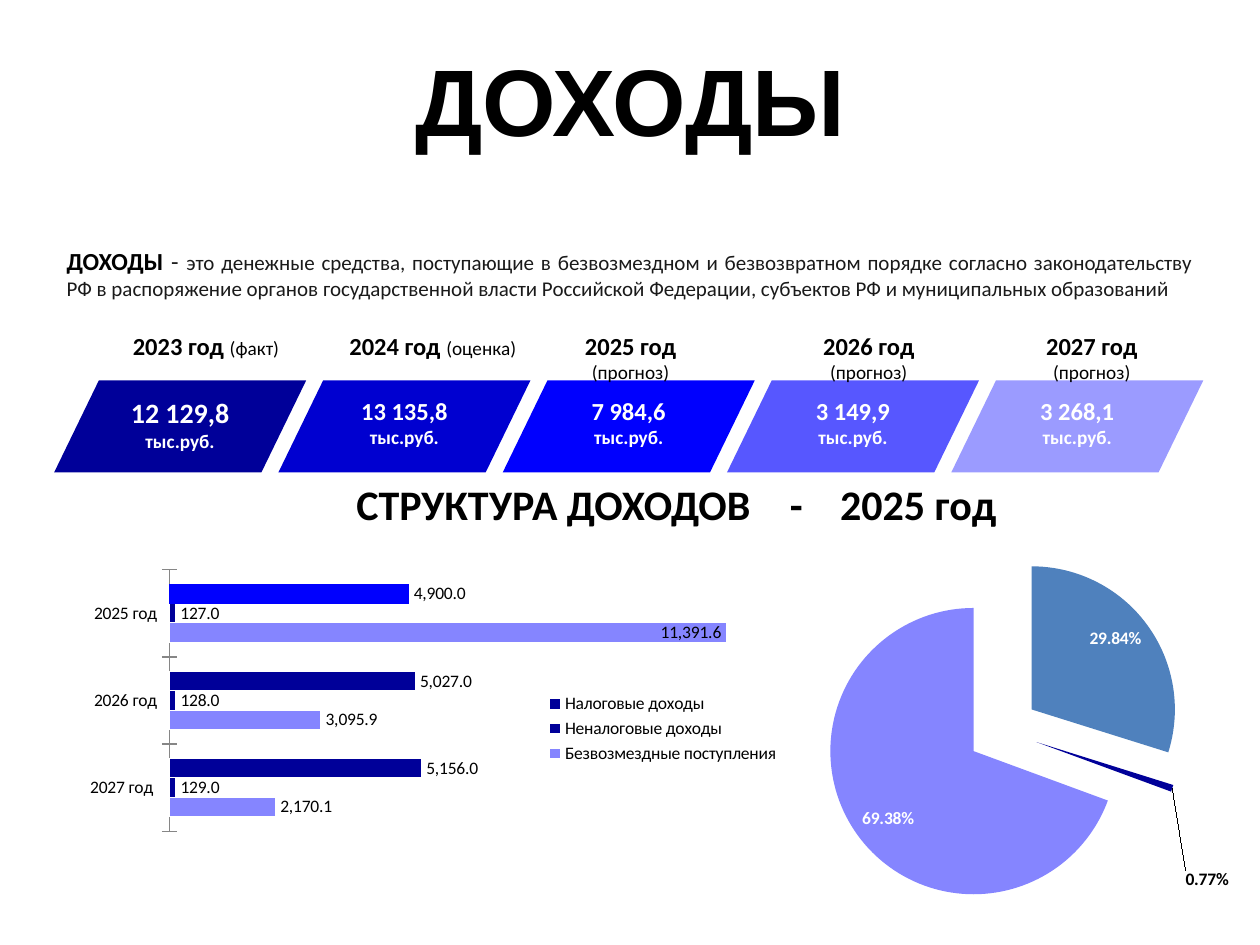
from dataclasses import dataclass

from lxml import etree
from pptx import Presentation
from pptx import util as u
from pptx.chart.data import CategoryChartData
from pptx.dml.color import RGBColor
from pptx.enum import chart as charts
from pptx.enum import shapes, text
from pptx.oxml import parse_xml
from pptx.oxml.ns import nsdecls, qn


@dataclass(frozen=True)
class Theme:
    body: str = "Calibri"
    display: str = "Arial"
    black: str = "000000"
    ink: str = "1A1A1A"
    white: str = "FFFFFF"
    axis: str = "868686"
    navy: str = "000099"
    blue: str = "0000FE"
    lilac: str = "8585FF"
    steel: str = "4F81BD"
    stages: tuple = ("000099", "0000D0", "0000FE", "5757FF", "9B9BFF")
    title: int = 54
    heading: int = 24
    large: int = 16
    strong: int = 14
    normal: int = 12
    small: int = 11
    chart: int = 10


@dataclass(frozen=True)
class Box:
    """A rectangle measured in grid cells of 0.1 inch: 100 columns by 75 rows."""
    left: float
    top: float
    width: float
    height: float

    def within(self, left, top, width, height):
        return Box(self.left + left, self.top + top, width, height)

    def place(self):
        return [u.Inches(cells / 10) for cells in (self.left, self.top, self.width, self.height)]


THEME = Theme()
# Year, status, column of the year label within its stage, amount, amount size
STAGES = [
    ("2023 год ", "(факт)", 4.3, "12 129,8 ", THEME.large),
    ("2024 год ", "(оценка)", 4.5, "13 135,8 ", THEME.strong),
    ("2025 год ", "(прогноз)", 2.4, "7 984,6 ", THEME.strong),
    ("2026 год ", "(прогноз)", 3.5, "3 149,9 ", THEME.strong),
    ("2027 год ", "(прогноз)", 3.4, "3 268,1 ", THEME.strong),
]


def color(value):
    return RGBColor.from_string(value)


def paint(target, value):
    target.format.fill.solid()
    target.format.fill.fore_color.rgb = color(value)


def style(font, size, value, bold=False, name=THEME.body):
    font.name, font.size, font.bold = name, u.Pt(size), bold
    font.color.rgb = color(value)


def add_text(parent, box, spans, align, anchor=text.MSO_ANCHOR.TOP):
    """Each span is (words, size, colour, bold)."""
    frame = parent.add_textbox(*box.place()).text_frame
    frame.word_wrap = True
    frame.auto_size = text.MSO_AUTO_SIZE.SHAPE_TO_FIT_TEXT
    frame.vertical_anchor = anchor
    para = frame.paragraphs[0]
    para.alignment = align
    for words, *look in spans:
        span = para.add_run()
        span.text = words
        style(span.font, *look)
    return para


def add_title(page, box):
    title = page.shapes.title
    title.left, title.top, title.width, title.height = box.place()
    title.text_frame.vertical_anchor = text.MSO_ANCHOR.MIDDLE
    para = title.text_frame.paragraphs[0]
    para.alignment = text.PP_ALIGN.CENTER
    span = para.add_run()
    span.text = "ДОХОДЫ"
    style(span.font, THEME.title, THEME.black, True, THEME.display)


def add_heading(page, box):
    para = add_text(page.shapes, box, [
        ("СТРУКТУРА ДОХОДОВ\t-\t2025 год", THEME.heading, THEME.black, True),
    ], text.PP_ALIGN.LEFT, text.MSO_ANCHOR.MIDDLE)
    # Tab stops for the dash and the year
    stops = etree.SubElement(para._p.get_or_add_pPr(), qn("a:tabLst"))
    for inches in (3.44, 3.84):
        etree.SubElement(stops, qn("a:tab"), pos=str(u.Inches(inches)), algn="l")


def add_definition(page, box):
    add_text(page.shapes, box, [
        ("ДОХОДЫ ", THEME.strong, THEME.black, True),
        ("- ", THEME.strong, THEME.ink),
        ("это денежные средства, поступающие в безвозмездном и безвозвратном порядке "
         "согласно законодательству РФ в распоряжение органов государственной власти "
         "Российской Федерации, субъектов РФ и муниципальных образований",
         THEME.normal, THEME.ink),
    ], text.PP_ALIGN.JUSTIFY, text.MSO_ANCHOR.MIDDLE)


def add_stages(page, box, pitch=17.8):
    center = text.PP_ALIGN.CENTER
    for index, (year, status, label_left, amount, size) in enumerate(STAGES):
        stage = box.within(index * pitch, 0, 20, box.height)
        group = page.shapes.add_group_shape().shapes
        # Slanted band
        band = group.add_shape(shapes.MSO_SHAPE.PARALLELOGRAM, *stage.within(0, 4.4, 20, 7.3).place())
        band.adjustments[0] = 0.486
        band.shadow.inherit = False
        band.fill.solid()
        band.fill.fore_color.rgb = color(THEME.stages[index])
        band.line.fill.background()
        # Year above the band, amount on it
        add_text(group, stage.within(label_left, 0, 15.5, 3.1), [
            (year, THEME.strong, THEME.black, True),
            (status, THEME.small, THEME.black),
        ], center)
        add_text(group, stage.within(3.7, 5.1, 12.6, 5.2), [
            (amount, size, THEME.white, True),
            ("тыс.руб.", THEME.small, THEME.white, True),
        ], center)


def layout_xml(inner=False, modes=True, **shares):
    target = '<c:layoutTarget val="inner"/>' if inner else ""
    edges = '<c:xMode val="edge"/><c:yMode val="edge"/>' if modes else ""
    values = "".join(f'<c:{name} val="{share}"/>' for name, share in shares.items())
    return parse_xml(f'<c:layout {nsdecls("c")}><c:manualLayout>{target}{edges}{values}'
                     '</c:manualLayout></c:layout>')


def add_chart(page, box, kind, categories, series, number_format, plot_shares):
    data = CategoryChartData(number_format=number_format)
    data.categories = categories
    for name, values in series:
        data.add_series(name, values)
    chart = page.shapes.add_chart(kind, *box.place(), data).chart
    chart.has_title = False
    chart.has_legend = False
    style(chart.font, THEME.chart, THEME.black)
    area = chart._chartSpace.chart.plotArea
    for old in area.findall(qn("c:layout")):
        area.remove(old)
    area.insert(0, layout_xml(inner=True, **plot_shares))
    return chart


def show_values(series, number_format, position, value=THEME.black, bold=False):
    labels = series.data_labels
    labels.show_value = True
    labels.number_format, labels.number_format_is_linked = number_format, False
    labels.position = position
    style(labels.font, THEME.chart, value, bold)


def set_point_label(series, index, position, number_format, bold=False, shift=None):
    label = series.points[index].data_label
    style(label.font, THEME.chart, THEME.black, bold)
    label.position = position
    node = series._element.find(qn("c:dLbls")).find(qn("c:dLbl"))
    node.insert(1, parse_xml(f'<c:numFmt {nsdecls("c")} formatCode="{number_format}" sourceLinked="0"/>'))
    if shift:
        node.insert(1, layout_xml(modes=False, **shift))


def add_bars(page, box):
    number_format, position = "#,##0.0", charts.XL_LABEL_POSITION
    chart = add_chart(page, box, charts.XL_CHART_TYPE.BAR_CLUSTERED, ["2027 год ", "2026 год", "2025 год"], [
        ("Безвозмездные поступления", (2170.1, 3095.9, 11391.6)),
        ("Неналоговые доходы", (129, 128, 127)),
        ("Налоговые доходы", (5156, 5027, 4900)),
    ], number_format, dict(x=0.157, y=0.074, w=0.8, h=0.692))
    plot = chart.plots[0]
    plot.vary_by_categories = False
    plot.gap_width, plot.overlap = 150, 0
    for series, fill in zip(plot.series, (THEME.lilac, THEME.navy, THEME.navy)):
        paint(series, fill)
        series.format.line.color.rgb = color(THEME.white)
        show_values(series, number_format, position.OUTSIDE_END)
    granted, _, taxes = plot.series
    paint(taxes.points[2], THEME.blue)
    set_point_label(granted, 2, position.INSIDE_END, number_format)
    # Axes
    chart.value_axis.visible = False
    chart.value_axis.has_major_gridlines = False
    chart.value_axis.minimum_scale, chart.value_axis.maximum_scale = 0, 12000
    chart.category_axis.major_tick_mark = charts.XL_TICK_MARK.CROSS
    chart.category_axis.format.line.color.rgb = color(THEME.axis)
    # Legend
    chart.has_legend = True
    chart.legend.position = charts.XL_LEGEND_POSITION.RIGHT
    chart.legend.include_in_layout = False
    chart.legend._element.find(qn("c:legendPos")).addnext(layout_xml(x=0.66, y=0.39, w=0.34, h=0.21))


def add_pie(page, box):
    number_format, position = "0.00%", charts.XL_LABEL_POSITION
    chart = add_chart(page, box, charts.XL_CHART_TYPE.PIE, ["1", "2", "3"],
                      [("Series 1", (0.2984, 0.0077, 0.6938))], number_format, dict(x=0, y=0.053, w=1, h=0.947))
    series = chart.plots[0].series[0]
    for index, fill in enumerate((THEME.steel, THEME.navy, THEME.lilac)):
        paint(series.points[index], fill)
    series._element.find(qn("c:dPt")).addprevious(parse_xml(f'<c:explosion {nsdecls("c")} val="25"/>'))
    show_values(series, number_format, position.INSIDE_END, THEME.white, True)
    set_point_label(series, 1, position.OUTSIDE_END, number_format, True, dict(x=0.01, y=0.21))


def main():
    deck = Presentation()
    deck.slide_width, deck.slide_height = u.Inches(10), u.Inches(7.5)
    page = deck.slides.add_slide(deck.slide_layouts[5])
    add_title(page, Box(0, 0, 100, 15.6))
    add_heading(page, Box(27.3, 37.5, 58.6, 5))
    add_definition(page, Box(4.3, 19, 91.4, 5.4))
    add_stages(page, Box(4.3, 25.8, 91.2, 11.7))
    add_bars(page, Box(4.3, 43, 58.2, 30))
    add_pie(page, Box(54.7, 42.2, 49.8, 30))
    deck.save("out.pptx")


if __name__ == "__main__":
    main()
